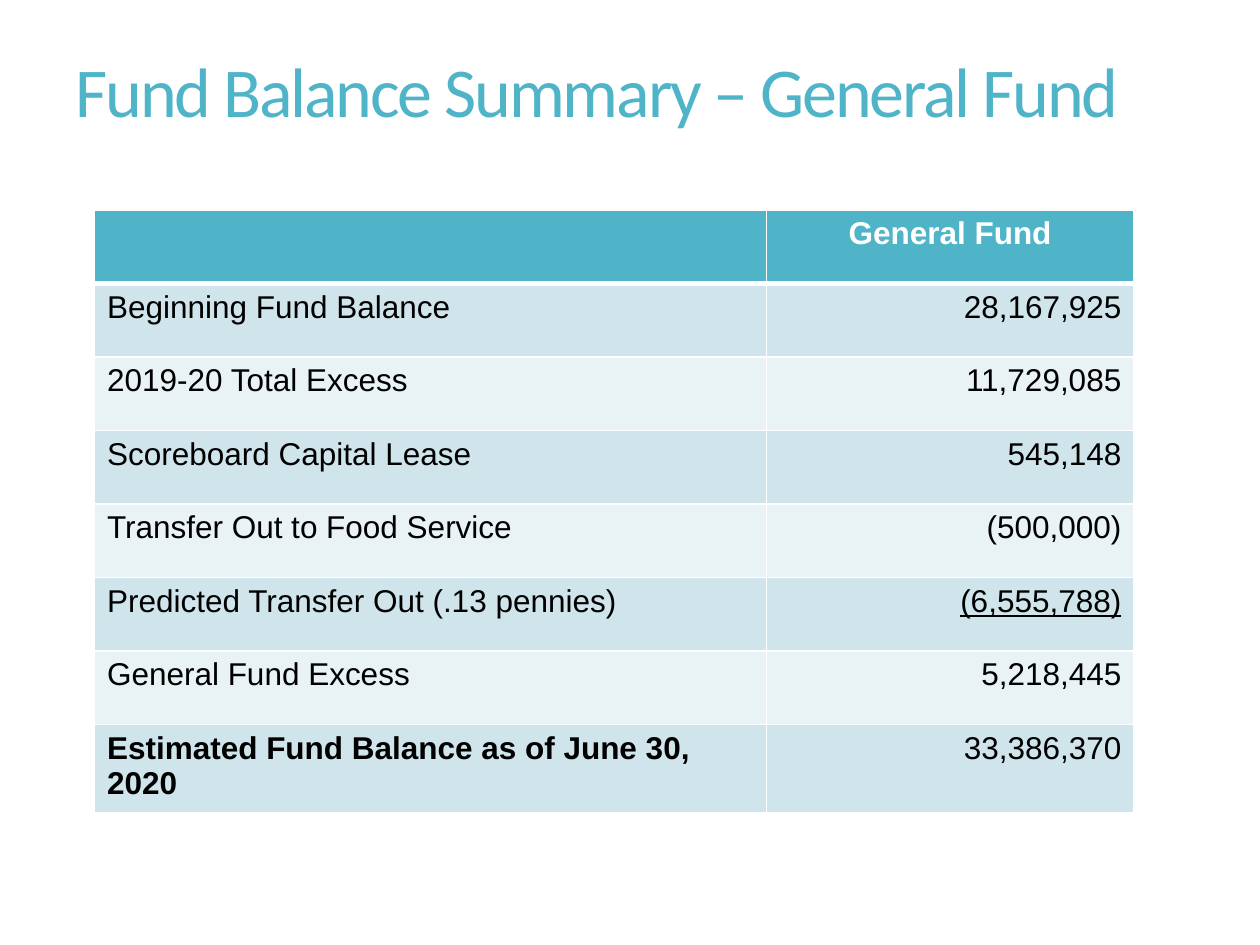
from lxml import etree
from pptx import Presentation
from pptx import util as u
from pptx.dml.color import RGBColor
from pptx.enum import text
from pptx.oxml import ns

TEAL, WHITE, BLACK = "50B4C8", "FFFFFF", "000000"
BANDS = ["D0E5EB", "E9F2F5"]
LEFT, CENTER, RIGHT = text.PP_ALIGN.LEFT, text.PP_ALIGN.CENTER, text.PP_ALIGN.RIGHT


def write(frame, words, size=18, font="Arial", color=BLACK, bold=False,
          underline=False, align=LEFT):
    para = frame.paragraphs[0]
    para.alignment = align
    span = para.add_run()
    span.text = words
    span.font.size = u.Pt(size)
    span.font.name = font
    span.font.bold = bold
    span.font.underline = underline
    span.font.color.rgb = RGBColor.from_string(color)
    return para


def add_border(cell, side, width):
    """Draw a white line on one side (L, R, T or B); call before filling the cell."""
    line = etree.SubElement(cell._tc.get_or_add_tcPr(), ns.qn(f"a:ln{side}"),
                            w=str(u.Pt(width)))
    fill = etree.SubElement(line, ns.qn("a:solidFill"))
    etree.SubElement(fill, ns.qn("a:srgbClr"), val=WHITE)


deck = Presentation()
deck.slide_width, deck.slide_height = u.Pt(720), u.Pt(540)
page = deck.slides.add_slide(deck.slide_layouts[6])

# Title
box = page.shapes.add_textbox(u.Pt(36), u.Pt(18), u.Pt(648), u.Pt(72))
box.text_frame.word_wrap = True
box.text_frame.vertical_anchor = text.MSO_ANCHOR.MIDDLE
title = write(box.text_frame, "Fund Balance Summary – General Fund",
              size=40, font="Calibri", color=TEAL)
title.line_spacing = 0.9
title.runs[0].font._element.set("spc", "-120")

# Fund balance table
rows = [
    ("", "General Fund"),
    ("Beginning Fund Balance", "28,167,925"),
    ("2019-20 Total Excess", "11,729,085"),
    ("Scoreboard Capital Lease", "545,148"),
    ("Transfer Out to Food Service", "(500,000)"),
    ("Predicted Transfer Out (.13 pennies)", "(6,555,788)"),
    ("General Fund Excess", "5,218,445"),
    ("Estimated Fund Balance as of June 30, 2020", "33,386,370"),
]
ROW_HEIGHT = 42
COLUMN_WIDTHS = [384, 210]
table = page.shapes.add_table(len(rows), 2, u.Pt(54), u.Pt(120), u.Pt(sum(COLUMN_WIDTHS)),
                              u.Pt(ROW_HEIGHT * len(rows))).table
for column, width in zip(table.columns, COLUMN_WIDTHS):
    column.width = u.Pt(width)

for r, row in enumerate(rows):
    header, total = r == 0, r == len(rows) - 1
    for c, words in enumerate(row):
        cell = table.cell(r, c)
        for side in "LRTB":
            header_rule = (header and side == "B") or (r == 1 and side == "T")
            add_border(cell, side, 3 if header_rule else 1)
        cell.fill.solid()
        cell.fill.fore_color.rgb = RGBColor.from_string(TEAL if header else BANDS[(r - 1) % 2])
        if words:
            write(cell.text_frame, words,
                  color=WHITE if header else BLACK,
                  bold=header or (total and c == 0),
                  underline=words == "(6,555,788)",
                  align=CENTER if header else (LEFT, RIGHT)[c])

deck.save("out.pptx")
